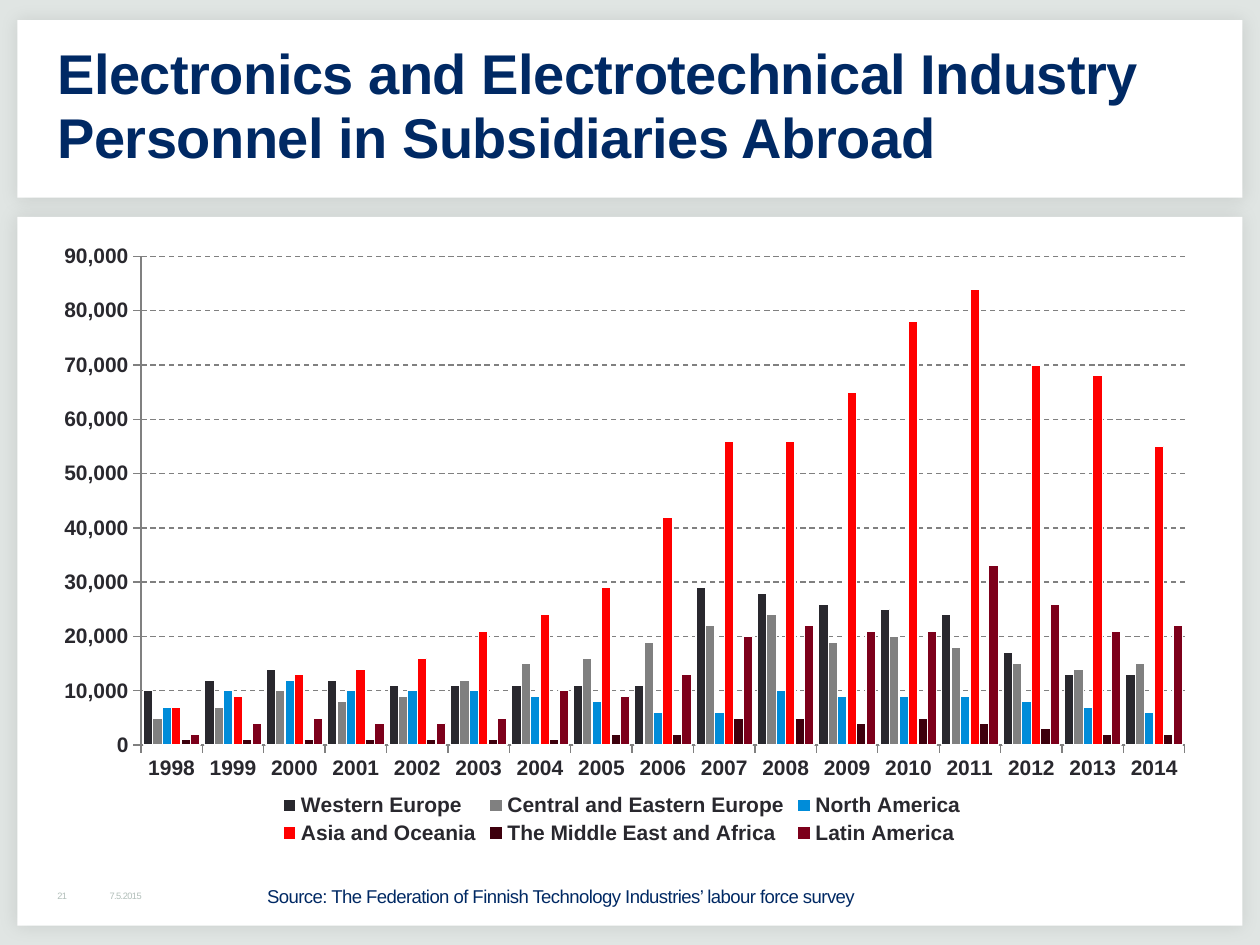
import pptx
import pptx.util
import pptx.dml.color
import pptx.chart.data
import pptx.enum.chart
import pptx.enum.dml
import pptx.enum.shapes
import pptx.enum.text
import pptx.oxml
import pptx.oxml.ns
from dataclasses import dataclass

Pt = pptx.util.Pt
RGB = pptx.dml.color.RGBColor.from_string
qn = pptx.oxml.ns.qn


@dataclass
class Theme:
    font: str = "Arial"
    background: str = "E0E5E3"
    panel: str = "FFFFFF"
    navy: str = "002964"
    footer: str = "B1BEB9"
    ink: str = "29282E"
    grid: str = "808080"
    title_size: float = 32
    chart_size: float = 12
    source_size: float = 10.6
    footer_size: float = 5.3


theme = Theme()
presentation = pptx.Presentation()
presentation.slide_width, presentation.slide_height = Pt(720), Pt(540)
slide = presentation.slides.add_slide(presentation.slide_layouts[6])
slide.background.fill.solid()
slide.background.fill.fore_color.rgb = RGB(theme.background)

for top, height in ((11.5, 101.5), (124, 405)):
    panel = slide.shapes.add_shape(
        pptx.enum.shapes.MSO_SHAPE.RECTANGLE, Pt(10), Pt(top), Pt(700), Pt(height))
    panel.fill.solid()
    panel.fill.fore_color.rgb = RGB(theme.panel)
    panel.line.fill.background()
    panel.shadow.inherit = False
    effects = panel._element.spPr.find(qn("a:effectLst"))
    effects.append(pptx.oxml.parse_xml(
        '<a:outerShdw xmlns:a="http://schemas.openxmlformats.org/drawingml/2006/main" '
        'blurRad="127000" dist="0" dir="2700000" algn="ctr" rotWithShape="0">'
        '<a:srgbClr val="000000"><a:alpha val="10000"/></a:srgbClr></a:outerShdw>'))


def add_text(text, box, size, color, margins, anchor, bold=False, line_spacing=None):
    shape = slide.shapes.add_textbox(*map(Pt, box))
    frame = shape.text_frame
    frame.word_wrap = True
    frame.vertical_anchor = anchor
    (frame.margin_left, frame.margin_top,
     frame.margin_right, frame.margin_bottom) = map(Pt, margins)
    paragraph = frame.paragraphs[0]
    run = paragraph.add_run()
    run.text = text
    run._r.get_or_add_rPr().set("spc", "-30")
    paragraph.line_spacing = line_spacing
    paragraph.font.name = theme.font
    paragraph.font.size = Pt(size)
    paragraph.font.bold = bold
    paragraph.font.color.rgb = RGB(color)


middle = pptx.enum.text.MSO_ANCHOR.MIDDLE
for text, left, width in (("7.5.2015", 59.8, 90), ("21", 30, 29.8)):
    add_text(text, (left, 506.2, width, 11.5), theme.footer_size, theme.footer,
             (2.8,) * 4, middle)
add_text("Electronics and Electrotechnical Industry Personnel in Subsidiaries Abroad",
         (30, 22.3, 660, 78.5), theme.title_size, theme.navy,
         (2.8, 3.6, 7.2, 3.6), middle, bold=True, line_spacing=0.95)

regions = (
    ("Western Europe", "29282E",
     (10, 12, 14, 12, 11, 11, 11, 11, 11, 29, 28, 26, 25, 24, 17, 13, 13)),
    ("Central and Eastern Europe", "808080",
     (5, 7, 10, 8, 9, 12, 15, 16, 19, 22, 24, 19, 20, 18, 15, 14, 15)),
    ("North America", "008CD9",
     (7, 10, 12, 10, 10, 10, 9, 8, 6, 6, 10, 9, 9, 9, 8, 7, 6)),
    ("Asia and Oceania", "FF0000",
     (7, 9, 13, 14, 16, 21, 24, 29, 42, 56, 56, 65, 78, 84, 70, 68, 55)),
    ("The Middle East and Africa", "3E000D",
     (1, 1, 1, 1, 1, 1, 1, 2, 2, 5, 5, 4, 5, 4, 3, 2, 2)),
    ("Latin America", "7D001B",
     (2, 4, 5, 4, 4, 5, 10, 9, 13, 20, 22, 21, 21, 33, 26, 21, 22)),
)
chart_data = pptx.chart.data.CategoryChartData(number_format="#,##0")
chart_data.categories = [str(year) for year in range(1998, 2015)]
for name, color, thousands in regions:
    chart_data.add_series(name, [value * 1000 for value in thousands])
chart = slide.shapes.add_chart(
    pptx.enum.chart.XL_CHART_TYPE.COLUMN_CLUSTERED,
    Pt(20.2), Pt(136), Pt(670.3), Pt(349.2), chart_data).chart
chart.has_title = False
chart.font.name = theme.font
chart.font.size = Pt(theme.chart_size)
chart.font.bold = True
chart.font.color.rgb = RGB(theme.ink)

plot = chart.plots[0]
plot.gap_width = 50
plot.overlap = 0
plot.vary_by_categories = False
for series, (name, color, thousands) in zip(plot.series, regions):
    series.format.fill.solid()
    series.format.fill.fore_color.rgb = RGB(color)
    series.format.line.color.rgb = RGB(theme.panel)
    series.format.line.width = Pt(0.75)

value_axis = chart.value_axis
value_axis.minimum_scale, value_axis.maximum_scale = 0, 90000
value_axis.major_unit = 10000
value_axis.tick_labels.number_format = "#,##0"
value_axis.tick_labels.number_format_is_linked = False
value_axis.has_major_gridlines = True
gridlines = value_axis.major_gridlines.format.line
gridlines.dash_style = pptx.enum.dml.MSO_LINE.DASH
for line in (gridlines, value_axis.format.line, chart.category_axis.format.line):
    line.color.rgb = RGB(theme.grid)
    line.width = Pt(0.75)
for axis in (value_axis, chart.category_axis):
    axis.major_tick_mark = pptx.enum.chart.XL_TICK_MARK.OUTSIDE

chart.has_legend = True
chart.legend.position = pptx.enum.chart.XL_LEGEND_POSITION.BOTTOM
chart.legend.include_in_layout = False

plot_area = chart._chartSpace.chart.plotArea
for layout in plot_area.findall(qn("c:layout")):
    plot_area.remove(layout)
plot_area.insert(0, pptx.oxml.parse_xml(
    '<c:layout xmlns:c="http://schemas.openxmlformats.org/drawingml/2006/chart">'
    '<c:manualLayout><c:layoutTarget val="inner"/>'
    '<c:xMode val="edge"/><c:yMode val="edge"/><c:x val="0.09"/><c:y val="0.03"/>'
    '<c:w val="0.89"/><c:h val="0.8"/></c:manualLayout></c:layout>'))

add_text("Source: The Federation of Finnish Technology Industries’ labour force survey",
         (150.5, 503.3, 424.8, 18), theme.source_size, theme.navy,
         (2.2,) * 4, pptx.enum.text.MSO_ANCHOR.TOP)

presentation.save("out.pptx")
